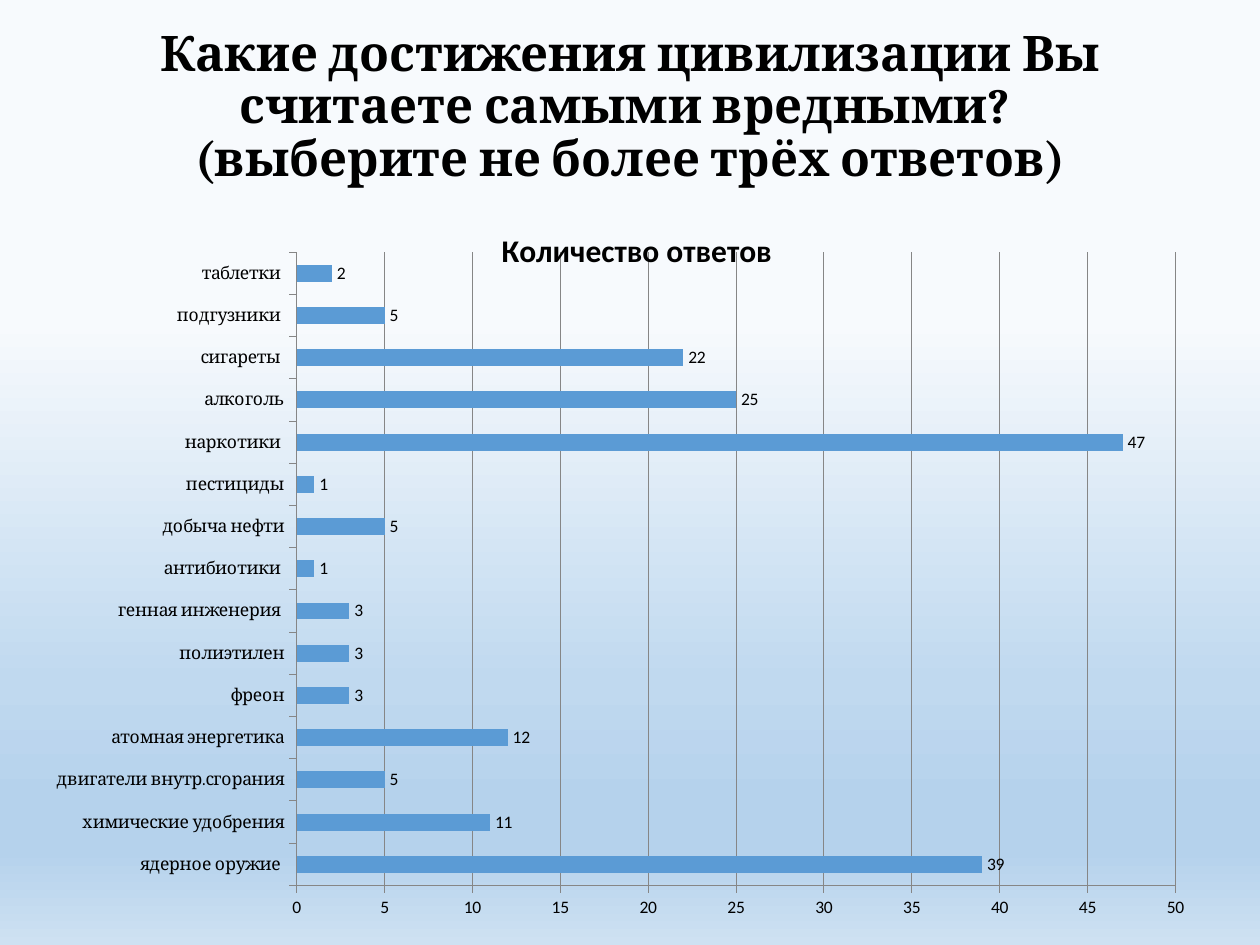
from lxml import etree
from pptx import Presentation
from pptx.chart.data import CategoryChartData
from pptx.dml.color import RGBColor
from pptx.enum import chart as ch, text
from pptx.oxml import parse_xml
from pptx.oxml.ns import nsdecls, qn
from pptx.util import Pt

BLACK = RGBColor(0x00, 0x00, 0x00)
GREY = RGBColor(0x86, 0x86, 0x86)
BLUE = RGBColor(0x5B, 0x9B, 0xD5)
SKY = [
    (34, RGBColor(0xF7, 0xFA, 0xFD)),
    (72, RGBColor(0xC0, 0xD9, 0xEF)),
    (85, RGBColor(0xB5, 0xD2, 0xEC)),
    (90, RGBColor(0xB5, 0xD2, 0xEC)),
    (100, RGBColor(0xCE, 0xE1, 0xF2)),
]

# Answers from the bottom bar to the top one
ANSWERS = [
    ("ядерное оружие ", 39),
    ("химические удобрения", 11),
    ("двигатели внутр.сгорания", 5),
    ("атомная энергетика", 12),
    ("фреон", 3),
    ("полиэтилен", 3),
    ("генная инженерия ", 3),
    ("антибиотики ", 1),
    ("добыча нефти", 5),
    ("пестициды", 1),
    ("наркотики ", 47),
    ("алкоголь", 25),
    ("сигареты ", 22),
    ("подгузники ", 5),
    ("таблетки ", 2),
]


def paint_background(slide):
    """Vertical gradient from near white to blue."""
    slide.background.fill.gradient()
    grad = slide.element.find(".//" + qn("a:gradFill"))
    stops = "".join(
        f'<a:gs pos="{pos * 1000}"><a:srgbClr val="{color}"/></a:gs>'
        for pos, color in SKY
    )
    grad.getparent().replace(grad, parse_xml(
        f'<a:gradFill {nsdecls("a")} rotWithShape="1"><a:gsLst>{stops}</a:gsLst>'
        '<a:lin ang="5400000" scaled="0"/></a:gradFill>'))


def set_font(font, name, size, bold=False):
    font.name, font.size, font.bold = name, Pt(size), bold
    font.color.rgb = BLACK


def set_line(line):
    line.color.rgb = GREY
    line.width = Pt(0.5)


def add_title(slide, left, top, width, height):
    sp = slide.shapes.title
    sp.left, sp.top, sp.width, sp.height = map(Pt, (left, top, width, height))
    tf = sp.text_frame
    tf.text = ("Какие достижения цивилизации Вы считаете самыми вредными? \v"
               "(выберите не более трёх ответов)")
    tf.word_wrap = True
    tf.auto_size = text.MSO_AUTO_SIZE.NONE
    tf.vertical_anchor = text.MSO_ANCHOR.MIDDLE
    p = tf.paragraphs[0]
    p.alignment = text.PP_ALIGN.CENTER
    p.line_spacing = 0.9
    set_font(p.font, "Cambria", 28, True)


def set_layout(parent, index, **settings):
    """Give a chart part a manual layout, in fractions of the chart."""
    for old in parent.findall(qn("c:layout")):
        parent.remove(old)
    layout = etree.Element(qn("c:layout"))
    manual = etree.SubElement(layout, qn("c:manualLayout"))
    for tag, value in settings.items():
        etree.SubElement(manual, qn("c:" + tag)).set("val", str(value))
    parent.insert(index, layout)


def add_answers_chart(slide, left, top, width, height):
    data = CategoryChartData()
    data.categories = [name for name, _ in ANSWERS]
    data.add_series("Series 1", [count for _, count in ANSWERS])
    chart = slide.shapes.add_chart(
        ch.XL_CHART_TYPE.BAR_CLUSTERED,
        *map(Pt, (left, top, width, height)), data).chart
    chart.has_legend = False
    set_font(chart.font, "Calibri", 10)

    # Title, laid over the plot
    chart.has_title = True
    title = chart.chart_title
    title.text_frame.text = "Количество ответов "
    set_font(title.text_frame.paragraphs[0].font, "Calibri", 18, True)
    title.include_in_layout = True
    set_layout(title._element, 1, xMode="edge", yMode="edge", x=0.38, y=0.03)

    # Bars and their values
    plot = chart.plots[0]
    plot.gap_width = 150
    plot.vary_by_categories = False
    fill = plot.series[0].format.fill
    fill.solid()
    fill.fore_color.rgb = BLUE
    plot.has_data_labels = True
    labels = plot.data_labels
    labels.show_value = True
    labels.position = ch.XL_LABEL_POSITION.OUTSIDE_END
    set_font(labels.font, "Calibri", 10)

    # Axes
    for axis, font in ((chart.category_axis, "Cambria"),
                       (chart.value_axis, "Calibri")):
        axis.major_tick_mark = ch.XL_TICK_MARK.OUTSIDE
        set_line(axis.format.line)
        set_font(axis.tick_labels.font, font, 10)
    counts = chart.value_axis
    counts.minimum_scale, counts.maximum_scale, counts.major_unit = 0, 50, 5
    counts.has_major_gridlines = True
    set_line(counts.major_gridlines.format.line)

    plot_area = chart.element.find(".//" + qn("c:plotArea"))
    set_layout(plot_area, 0, layoutTarget="inner", xMode="edge", yMode="edge",
               x=0.21, y=0.07, w=0.75, h=0.87)


def main():
    prs = Presentation()
    prs.slide_width, prs.slide_height = Pt(720), Pt(540)
    slide = prs.slides.add_slide(prs.slide_layouts[5])
    paint_background(slide)
    add_title(slide, 49.5, 9.5, 621, 104.5)
    add_answers_chart(slide, 29, 115, 669.5, 416)
    prs.save("out.pptx")


if __name__ == "__main__":
    main()
